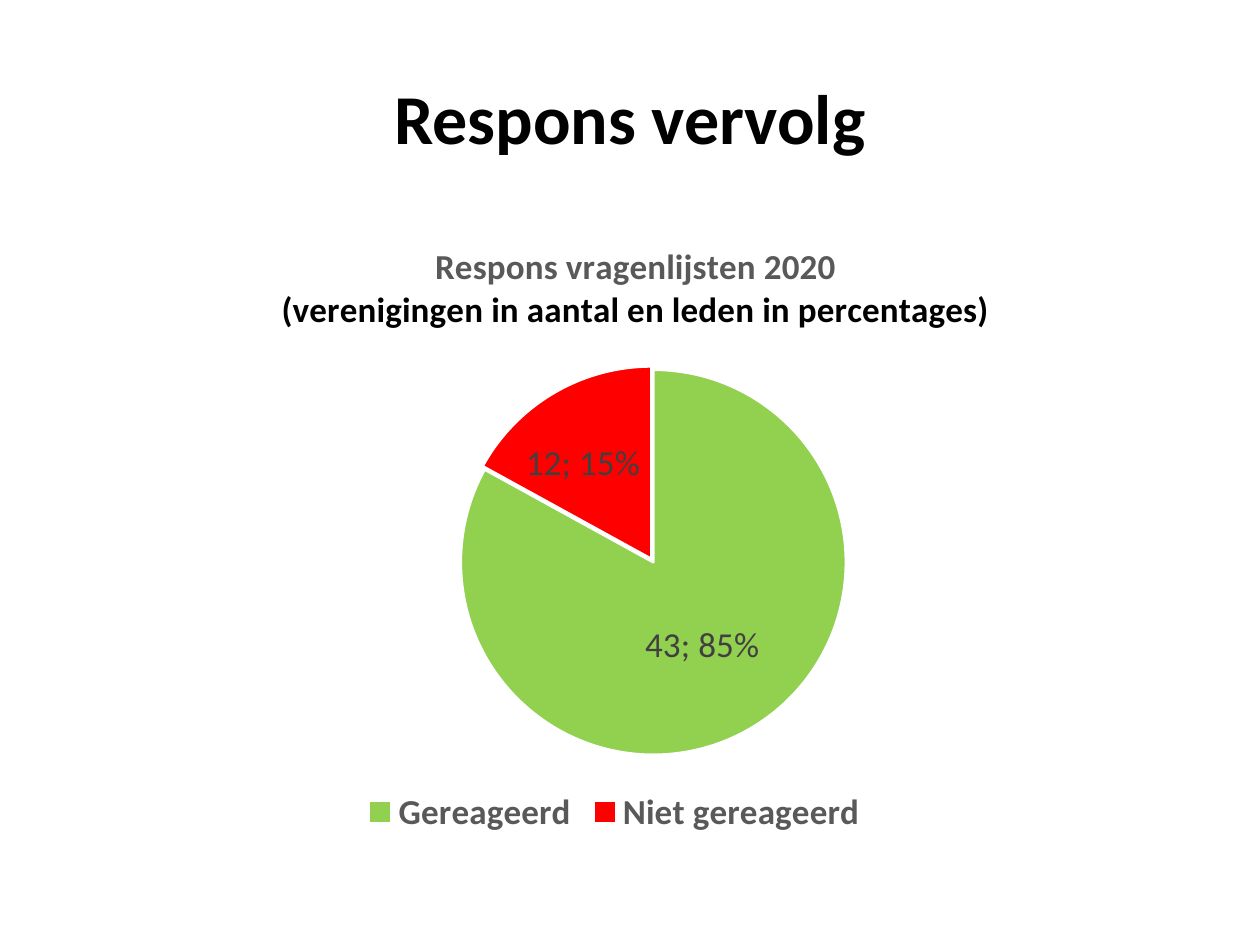
import pptx
import pptx.chart.data
import pptx.dml.color
import pptx.enum.chart
import pptx.enum.text
import pptx.oxml
import pptx.util
from pptx.util import Cm

BLACK = pptx.dml.color.RGBColor(0x00, 0x00, 0x00)
WHITE = pptx.dml.color.RGBColor(0xFF, 0xFF, 0xFF)
GREY = pptx.dml.color.RGBColor(0x59, 0x59, 0x59)
DARK_GREY = pptx.dml.color.RGBColor(0x40, 0x40, 0x40)
GREEN = pptx.dml.color.RGBColor(0x92, 0xD0, 0x50)
RED = pptx.dml.color.RGBColor(0xFF, 0x00, 0x00)
CHART_NS = 'xmlns:c="http://schemas.openxmlformats.org/drawingml/2006/chart"'


def style_font(font, size, color, bold=True):
    """Apply the deck typeface with the given size, colour and weight."""
    font.name = "Calibri"
    font.size = pptx.util.Pt(size)
    font.color.rgb = color
    font.bold = bold


def manual_layout(modes, **fractions):
    """Return a chart layout element with positions as fractions of the chart."""
    parts = modes + "".join(f'<c:{key} val="{value}"/>' for key, value in fractions.items())
    return pptx.oxml.parse_xml(
        f"<c:layout {CHART_NS}><c:manualLayout>{parts}</c:manualLayout></c:layout>")


def replace_layout(parent, layout, index):
    """Put the layout into the parent at the index, in place of any present one."""
    for old in parent.findall(layout.tag):
        parent.remove(old)
    parent.insert(index, layout)


def add_heading(page, left, top, width, height):
    """Place the centred slide heading in the given box."""
    box = page.shapes.add_textbox(left, top, width, height)
    frame = box.text_frame
    frame.word_wrap = True
    frame.vertical_anchor = pptx.enum.text.MSO_ANCHOR.MIDDLE
    frame.text = "Respons vervolg"
    para = frame.paragraphs[0]
    para.alignment = pptx.enum.text.PP_ALIGN.CENTER
    style_font(para.runs[0].font, 40, BLACK)


def title_chart(chart):
    """Write the two-line chart title and set its position."""
    frame = chart.chart_title.text_frame
    frame.text = "Respons vragenlijsten 2020\n(verenigingen in aantal en leden in percentages)"
    for para, color in zip(frame.paragraphs, (GREY, BLACK)):
        para.alignment = pptx.enum.text.PP_ALIGN.CENTER
        style_font(para.runs[0].font, 20, color)
    chart.chart_title.include_in_layout = False
    edges = '<c:xMode val="edge"/><c:yMode val="edge"/>'
    replace_layout(chart.chart_title._element, manual_layout(edges, x=0.15, y=0.07), 1)


def style_slices(series):
    """Colour the slices and write their labels."""
    for index, (color, text) in enumerate(((GREEN, "43; 85%"), (RED, "12; 15%"))):
        point = series.points[index]
        point.format.fill.solid()
        point.format.fill.fore_color.rgb = color
        point.format.line.color.rgb = WHITE
        point.format.line.width = pptx.util.Pt(1.5)
        label = point.data_label
        label.text_frame.text = text
        style_font(label.text_frame.paragraphs[0].runs[0].font, 20, DARK_GREY, False)
        label.position = pptx.enum.chart.XL_LABEL_POSITION.CENTER
    red_label = series._element.xpath('c:dLbls/c:dLbl[c:idx/@val="1"]')[0]
    replace_layout(red_label, manual_layout("", x=-0.02, y=-0.02), 1)
    red_shape = series._element.xpath('c:dPt[c:idx/@val="1"]/c:spPr')[0]
    red_shape.addprevious(pptx.oxml.parse_xml(f'<c:explosion {CHART_NS} val="2"/>'))


def add_response_chart(page, left, top, width, height):
    """Place the response pie with its title and legend in the given box."""
    data = pptx.chart.data.CategoryChartData()
    data.categories = ["Gereageerd", "Niet gereageerd"]
    data.add_series("Series 1", (83, 17))
    kind = pptx.enum.chart.XL_CHART_TYPE.PIE
    chart = page.shapes.add_chart(kind, left, top, width, height, data).chart
    style_font(chart.font, 10, BLACK, False)
    title_chart(chart)
    chart.plots[0].vary_by_categories = True
    style_slices(chart.plots[0].series[0])
    chart.has_legend = True
    chart.legend.position = pptx.enum.chart.XL_LEGEND_POSITION.BOTTOM
    chart.legend.include_in_layout = False
    style_font(chart.legend.font, 20, GREY)
    modes = '<c:layoutTarget val="inner"/><c:xMode val="edge"/><c:yMode val="edge"/>'
    plot_area = chart._chartSpace.chart.plotArea
    replace_layout(plot_area, manual_layout(modes, x=0.34, y=0.27, w=0.4, h=0.6), 0)


def main():
    """Build the slide and save the deck."""
    deck = pptx.Presentation()
    deck.slide_width, deck.slide_height = Cm(25.4), Cm(19.05)
    page = deck.slides.add_slide(deck.slide_layouts[6])
    add_heading(page, Cm(1.27), Cm(0.76), Cm(22.86), Cm(3.18))
    add_response_chart(page, Cm(2.69), Cm(3.91), Cm(19.41), Cm(13.03))
    deck.save("out.pptx")


if __name__ == "__main__":
    main()
